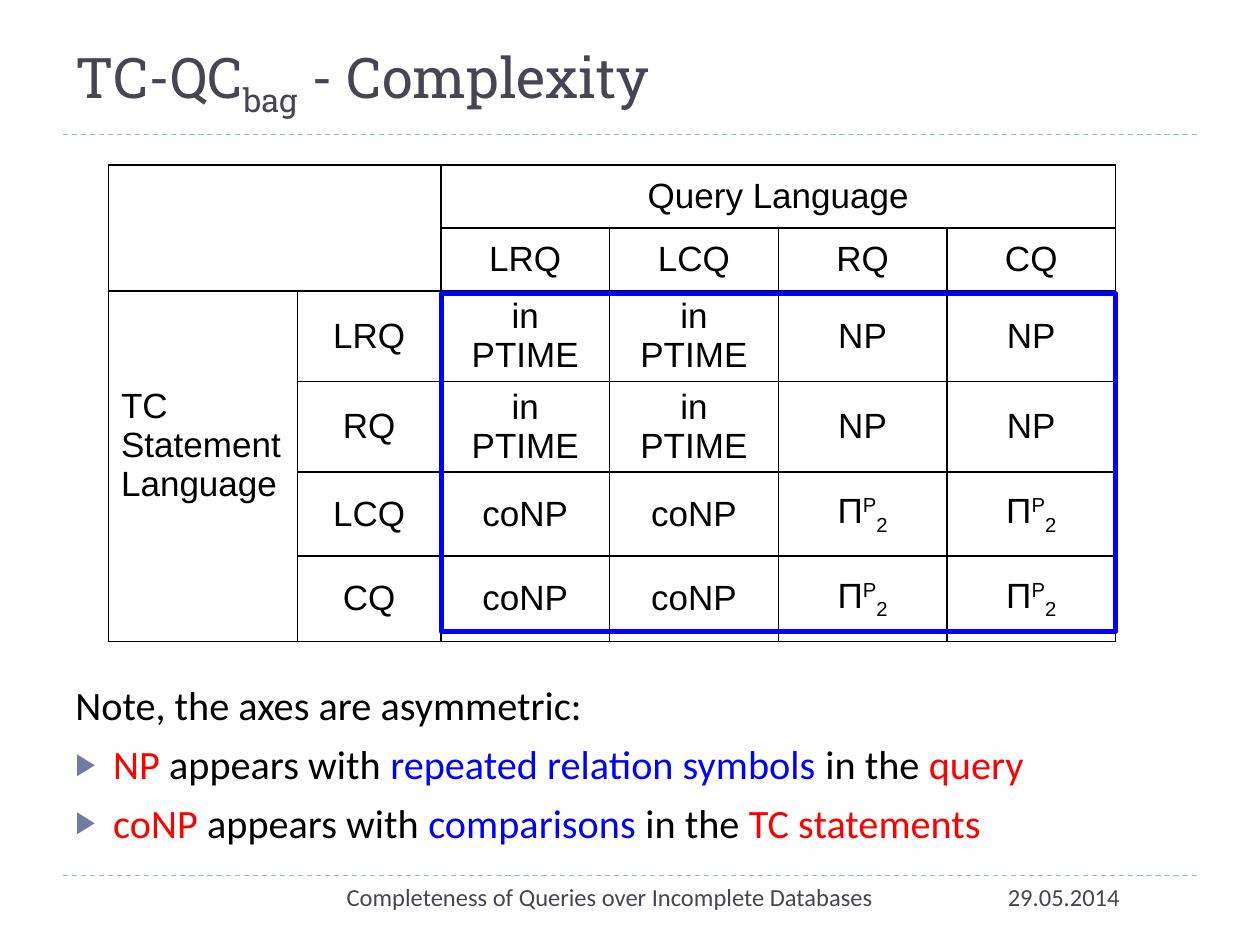
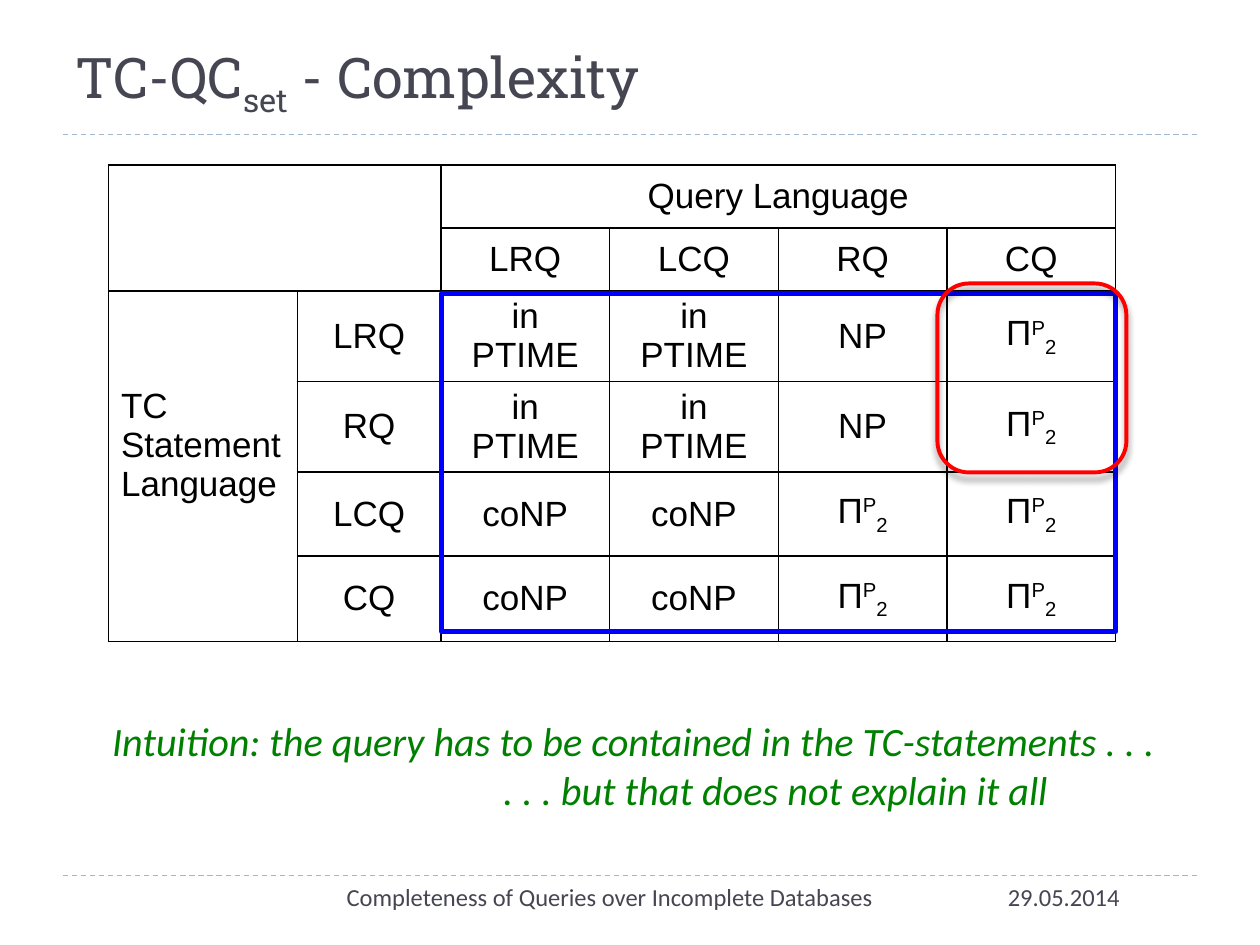
from dataclasses import dataclass
from lxml import etree
from pptx import Presentation
from pptx import util as u
from pptx.dml.color import RGBColor
from pptx.enum import dml, shapes, text
from pptx.oxml import ns

Pt = u.Pt


@dataclass
class Theme:
    ink: str = "464653"
    black: str = "000000"
    red: str = "FF0000"
    blue: str = "0000FF"
    green: str = "008000"
    rule: str = "9FB8CD"
    mark: str = "727CA3"
    head: str = "Roboto Slab"
    body: str = "Calibri"
    grid: str = "Arial"
    big: int = 32
    mid: int = 23
    cell: int = 20
    small: int = 14


th = Theme()
mid = text.PP_ALIGN.CENTER
left = text.PP_ALIGN.LEFT


def box(slide, x, y, w, h):
    frame = slide.shapes.add_textbox(Pt(x), Pt(y), Pt(w), Pt(h)).text_frame
    frame.word_wrap = True
    return frame


def write(para, runs, font, size, align=left):
    """Add runs given as (words, colour, baseline in percent)."""
    para.alignment = align
    for words, tint, base in runs:
        run = para.add_run()
        run.text = words
        run.font.name = font
        run.font.size = Pt(size)
        run.font.bold = False
        run.font.color.rgb = RGBColor.from_string(tint)
        if base:
            run._r.get_or_add_rPr().set("baseline", str(base * 1000))


# Table content; PI marks the second-level class
PI = [("Π", th.black, 0), ("P", th.black, 30), ("2", th.black, -25)]
langs = ["LRQ", "LCQ", "RQ", "CQ"]
easy = ["in PTIME", "in PTIME", "NP"]
hard = ["coNP", "coNP", PI, PI]
cols = [108, 82] + [96.4] * 4
rows = [36, 36, 51.7, 51.7, 48.2, 48.6]
spans = [(0, 0, 1, 1), (0, 2, 0, 5), (2, 0, 5, 0)]

prs = Presentation()
prs.slide_width, prs.slide_height = Pt(720), Pt(540)
deck = []

for sub, last in [("bag", "NP"), ("set", PI)]:
    slide = prs.slides.add_slide(prs.slide_layouts[6])
    deck.append(slide)

    # Dashed rules
    for y in (500.4, 77):
        line = slide.shapes.add_connector(
            shapes.MSO_CONNECTOR.STRAIGHT, Pt(36), Pt(y), Pt(684), Pt(y))
        line.line.color.rgb = RGBColor.from_string(th.rule)
        line.line.width = Pt(0.75)
        line.line.dash_style = dml.MSO_LINE.DASH
        etree.SubElement(line._element.spPr, ns.qn("a:effectLst"))

    # Title
    frame = box(slide, 36, 11.6, 648, 59.8)
    frame.vertical_anchor = text.MSO_ANCHOR.BOTTOM
    write(frame.paragraphs[0], [("TC-QC", th.ink, 0), (sub, th.ink, -25),
                                (" - Complexity", th.ink, 0)], th.head, th.big)

    # Complexity table, with slim margins so that two lines fit a row
    data = [[None, None, "Query Language", None, None, None],
            [None, None] + langs,
            ["TC Statement Language", "LRQ"] + easy + [last],
            [None, "RQ"] + easy + [last],
            [None, "LCQ"] + hard,
            [None, "CQ"] + hard]
    table = slide.shapes.add_table(6, 6, Pt(62), Pt(94.3), Pt(sum(cols)),
                                   Pt(sum(rows))).table
    table.first_row = table.horz_banding = False
    for col, wide in zip(table.columns, cols):
        col.width = Pt(wide)
    for row, high in zip(table.rows, rows):
        row.height = Pt(high)
    for r, c, r2, c2 in spans:
        table.cell(r, c).merge(table.cell(r2, c2))
    for r, row in enumerate(data):
        for c, item in enumerate(row):
            cell = table.cell(r, c)
            cell.vertical_anchor = text.MSO_ANCHOR.MIDDLE
            cell.margin_top = cell.margin_bottom = Pt(1.5)
            prop = cell._tc.get_or_add_tcPr()
            for side in ("lnL", "lnR", "lnT", "lnB"):
                edge = etree.SubElement(prop, ns.qn("a:" + side), w="12700")
                fill = etree.SubElement(edge, ns.qn("a:solidFill"))
                etree.SubElement(fill, ns.qn("a:srgbClr"), val=th.black)
            cell.fill.background()
            if item:
                runs = [(item, th.black, 0)] if isinstance(item, str) else item
                write(cell.text_frame.paragraphs[0], runs, th.grid, th.cell,
                      left if c == 0 else mid)
    table.cell(2, 0).margin_bottom = Pt(25)

    # Frame around the results
    frame = slide.shapes.add_shape(shapes.MSO_SHAPE.RECTANGLE, Pt(252.3),
                                   Pt(167.8), Pt(385.2), Pt(193))
    frame.shadow.inherit = False
    frame.fill.background()
    frame.line.color.rgb = RGBColor.from_string(th.blue)
    frame.line.width = Pt(3)

    # Footer
    for words, x, w, align in [
            ("29.05.2014", 568.8, 142.6, left),
            ("Completeness of Queries over Incomplete Databases",
             161.3, 374.4, mid)]:
        foot = box(slide, x, 500.4, w, 28.8)
        write(foot.paragraphs[0], [(words, th.ink, 0)], th.body, th.small, align)

# Slide 1: note with two bullets
note = box(deck[0], 36, 385.4, 648, 110)
write(note.paragraphs[0], [("Note, the axes are asymmetric:", th.black, 0)],
      th.body, th.mid)
for name, cause, place in [("NP", "repeated relation symbols", "query"),
                           ("coNP", "comparisons", "TC statements")]:
    para = note.add_paragraph()
    para.space_before = Pt(6)
    write(para, [(name, th.red, 0), (" appears with ", th.black, 0),
                 (cause, th.blue, 0), (" in the ", th.black, 0),
                 (place, th.red, 0)], th.body, th.mid)
    prop = para._p.get_or_add_pPr()
    prop.set("marL", str(Pt(21.6)))
    prop.set("indent", str(-Pt(21.6)))
    tint = etree.SubElement(prop, ns.qn("a:buClr"))
    etree.SubElement(tint, ns.qn("a:srgbClr"), val=th.mark)
    etree.SubElement(prop, ns.qn("a:buSzPct"), val="76000")
    etree.SubElement(prop, ns.qn("a:buFont"), typeface=th.grid)
    etree.SubElement(prop, ns.qn("a:buChar"), char="▶")

# Slide 2: intuition in two indented lines
hint = box(deck[1], 36, 406, 648, 70)
lines = [("Intuition: the query has to be contained in the TC-statements . . .", 21),
         (". . . but that does not explain it all", 244.4)]
for i, (words, inset) in enumerate(lines):
    para = hint.add_paragraph() if i else hint.paragraphs[0]
    write(para, [(words, th.green, 0)], th.body, th.mid)
    para.runs[0].font.italic = True
    para._p.get_or_add_pPr().set("marL", str(Pt(inset)))

# Slide 2: ring around the changed cells
ring = deck[1].shapes.add_shape(shapes.MSO_SHAPE.ROUNDED_RECTANGLE, Pt(535.7),
                                Pt(162), Pt(108), Pt(108))
ring.shadow.inherit = False
ring.fill.background()
ring.line.color.rgb = RGBColor.from_string(th.red)
ring.line.width = Pt(2.25)
glow = etree.SubElement(ring._element.spPr.find(ns.qn("a:effectLst")),
                        ns.qn("a:outerShdw"), blurRad=str(Pt(4)),
                        dist=str(Pt(3.4)), dir="5400000", rotWithShape="0")
tint = etree.SubElement(glow, ns.qn("a:srgbClr"), val=th.black)
etree.SubElement(tint, ns.qn("a:alpha"), val="40000")

prs.save("out.pptx")
